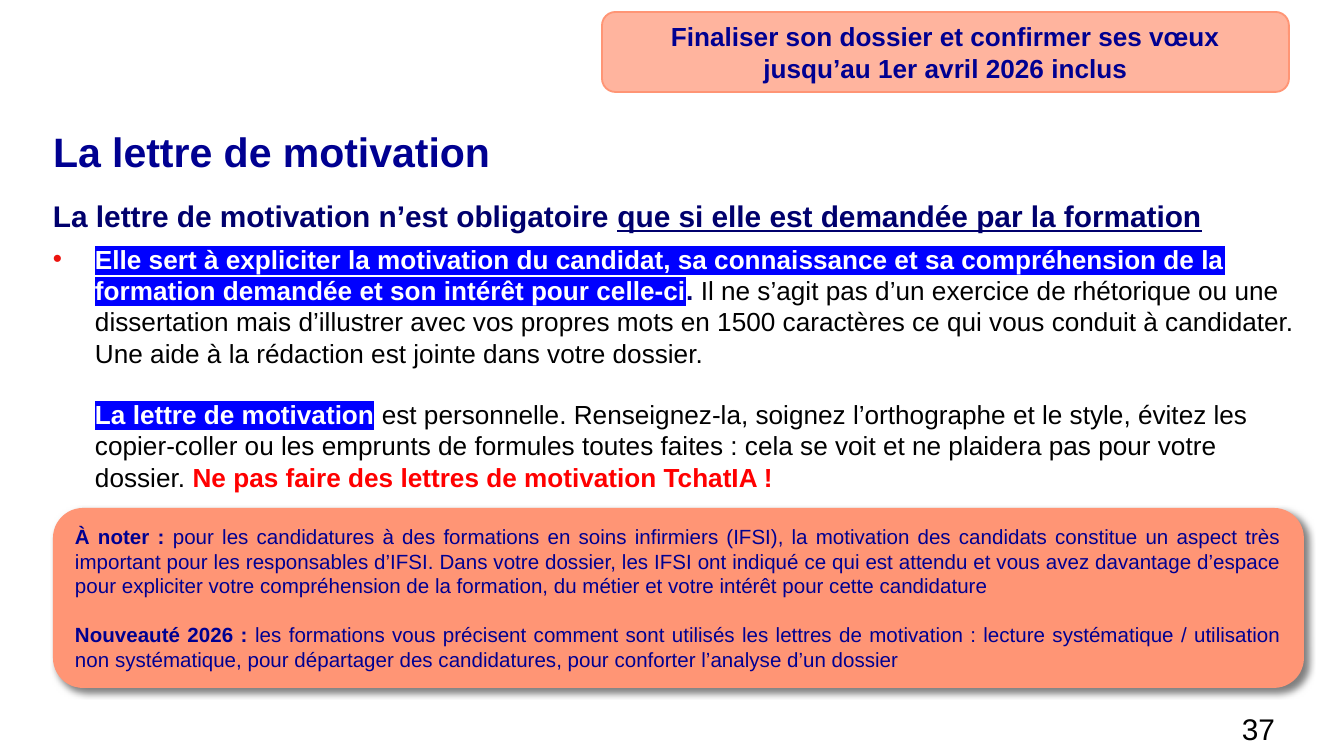
"""Build the slide about the cover letter of an application file."""
from dataclasses import dataclass
from typing import Optional

from lxml import etree
from pptx import Presentation
from pptx import util as u
from pptx.dml.color import RGBColor
from pptx.enum import shapes, text
from pptx.oxml import ns

EMU_PER_PX = 914400 / 134.4
FONT = "Arial"
NAVY = RGBColor(0x00, 0x00, 0x91)
DARK_NAVY = RGBColor(0x00, 0x00, 0x6D)
BLACK = RGBColor(0x00, 0x00, 0x00)
WHITE = RGBColor(0xFF, 0xFF, 0xFF)
RED = RGBColor(0xFF, 0x00, 0x00)
BULLET_RED = RGBColor(0xEC, 0x13, 0x0E)
BLUE = RGBColor(0x00, 0x00, 0xFF)
SALMON = RGBColor(0xFF, 0x95, 0x75)
LEFT = text.PP_ALIGN.LEFT
INDENT = 42


@dataclass(frozen=True)
class Box:
    left: int
    top: int
    width: int
    height: int


@dataclass(frozen=True)
class Run:
    words: str
    color: RGBColor = NAVY
    bold: bool = False
    underline: bool = False
    highlight: Optional[RGBColor] = None


def px(value: int) -> u.Emu:
    return u.Emu(round(value * EMU_PER_PX))


def add_element(parent, tag: str, **attributes):
    return etree.SubElement(parent, ns.qn(tag), attributes)


def place(box: Box) -> tuple:
    return px(box.left), px(box.top), px(box.width), px(box.height)


def write(frame, runs: list[Run], *, size: int, align=LEFT, before: float = 0,
          after: float = 0, spacing: float = 1.0, indent: int = 0, bullet: str = "") -> None:
    paragraph = frame.paragraphs[0]
    if paragraph.runs:
        paragraph = frame.add_paragraph()
    paragraph.alignment = align
    paragraph.space_before, paragraph.space_after = u.Pt(before), u.Pt(after)
    paragraph.line_spacing = spacing
    properties = paragraph._p.get_or_add_pPr()
    if indent:
        properties.set("marL", str(px(indent)))
    if bullet:
        properties.set("indent", str(-px(indent)))
        add_element(add_element(properties, "a:buClr"), "a:srgbClr", val=str(BULLET_RED))
        add_element(properties, "a:buFont", typeface=FONT)
        add_element(properties, "a:buChar", char=bullet)
    for item in runs:
        run = paragraph.add_run()
        run.text = item.words
        font = run.font
        font.name, font.size = FONT, u.Pt(size)
        font.bold, font.underline = item.bold, item.underline
        font.color.rgb = item.color
        if item.highlight is not None:
            highlight = etree.Element(ns.qn("a:highlight"))
            add_element(highlight, "a:srgbClr", val=str(item.highlight))
            run._r.rPr.find(ns.qn("a:solidFill")).addnext(highlight)


def add_text_box(slide, box: Box, margin: int = 0):
    frame = slide.shapes.add_textbox(*place(box)).text_frame
    frame.word_wrap = True
    frame.margin_left = frame.margin_right = px(margin)
    frame.margin_top = frame.margin_bottom = px(margin // 2)
    return frame


def add_panel(slide, box: Box):
    panel = slide.shapes.add_shape(shapes.MSO_SHAPE.ROUNDED_RECTANGLE, *place(box))
    panel.fill.solid()
    panel.fill.fore_color.rgb = SALMON
    panel.line.fill.background()
    panel.shadow.inherit = False
    panel.text_frame.word_wrap = True
    panel.text_frame.vertical_anchor = text.MSO_ANCHOR.MIDDLE
    return panel


def add_shadow(panel) -> None:
    effects = panel._element.spPr.find(ns.qn("a:effectLst"))
    shadow = add_element(effects, "a:outerShdw", blurRad=str(u.Pt(4)), dist=str(u.Pt(3)),
                         dir=str(45 * 60000), algn="tl", rotWithShape="0")
    add_element(add_element(shadow, "a:srgbClr", val=str(BLACK)), "a:alpha", val="50000")


def add_body(slide) -> None:
    frame = add_text_box(slide, Box(53, 198, 1251, 476))
    write(frame, [
        Run("La lettre de motivation n’est obligatoire ", DARK_NAVY, True),
        Run("que si elle est demandée par la formation", DARK_NAVY, True, underline=True),
    ], size=16, after=5)
    write(frame, [
        Run("Elle sert à expliciter la motivation du candidat, sa connaissance et sa "
            "compréhension de la formation demandée et son intérêt pour celle-ci",
            WHITE, True, highlight=BLUE),
        Run(". ", DARK_NAVY, True),
        Run("Il ne s’agit pas d’un exercice de rhétorique ou une dissertation mais "
            "d’illustrer avec vos propres mots en 1500 caractères ce qui vous conduit à "
            "candidater. Une aide à la rédaction est jointe dans votre dossier.", BLACK),
    ], size=14, after=5, indent=INDENT, bullet="•")
    write(frame, [
        Run("La lettre de motivation", WHITE, True, highlight=BLUE),
        Run(" est personnelle. Renseignez-la, soignez l’orthographe et le style, évitez "
            "les copier-coller ou les emprunts de formules toutes faites : cela se voit et "
            "ne plaidera pas pour votre dossier. ", BLACK),
        Run("Ne pas faire des lettres de motivation TchatIA !", RED, True),
    ], size=14, before=11, after=5, indent=INDENT)


def add_note(slide) -> None:
    panel = add_panel(slide, Box(53, 508, 1251, 180))
    add_shadow(panel)
    justify = text.PP_ALIGN.JUSTIFY
    write(panel.text_frame, [
        Run("À noter : ", bold=True),
        Run("pour les candidatures à des formations en soins infirmiers (IFSI), la "
            "motivation des candidats constitue un aspect très important pour les "
            "responsables d’IFSI. Dans votre dossier, les IFSI ont indiqué ce qui est "
            "attendu et vous avez davantage d’espace pour expliciter votre compréhension "
            "de la formation, du métier et votre intérêt pour cette candidature"),
    ], size=11, align=justify)
    write(panel.text_frame, [
        Run("Nouveauté 2026 : ", bold=True),
        Run("les formations vous précisent comment sont utilisés les lettres de "
            "motivation : lecture systématique / utilisation non systématique, pour "
            "départager des candidatures, pour conforter l’analyse d’un dossier"),
    ], size=11, align=justify, before=13)


def add_banner(slide) -> None:
    panel = add_panel(slide, Box(602, 12, 687, 80))
    color = panel._element.spPr.find(ns.qn("a:solidFill")).find(ns.qn("a:srgbClr"))
    add_element(color, "a:alpha", val="70000")
    panel.line.color.rgb = SALMON
    panel.line.width = u.Pt(1)
    write(panel.text_frame, [
        Run("Finaliser son dossier et confirmer ses vœux jusqu’au 1er avril 2026 inclus",
            bold=True),
    ], size=14, align=text.PP_ALIGN.CENTER)


def main() -> None:
    presentation = Presentation()
    presentation.slide_width, presentation.slide_height = px(1344), px(756)
    slide = presentation.slides.add_slide(presentation.slide_layouts[6])
    number = add_text_box(slide, Box(1117, 703, 172, 52), margin=14)
    number.vertical_anchor = text.MSO_ANCHOR.MIDDLE
    write(number, [Run("37", BLACK)], size=16, align=text.PP_ALIGN.RIGHT)
    title = add_text_box(slide, Box(53, 132, 1238, 106))
    write(title, [Run("La lettre de motivation", bold=True)], size=22, spacing=0.9)
    add_body(slide)
    add_note(slide)
    add_banner(slide)
    presentation.save("out.pptx")


if __name__ == "__main__":
    main()
